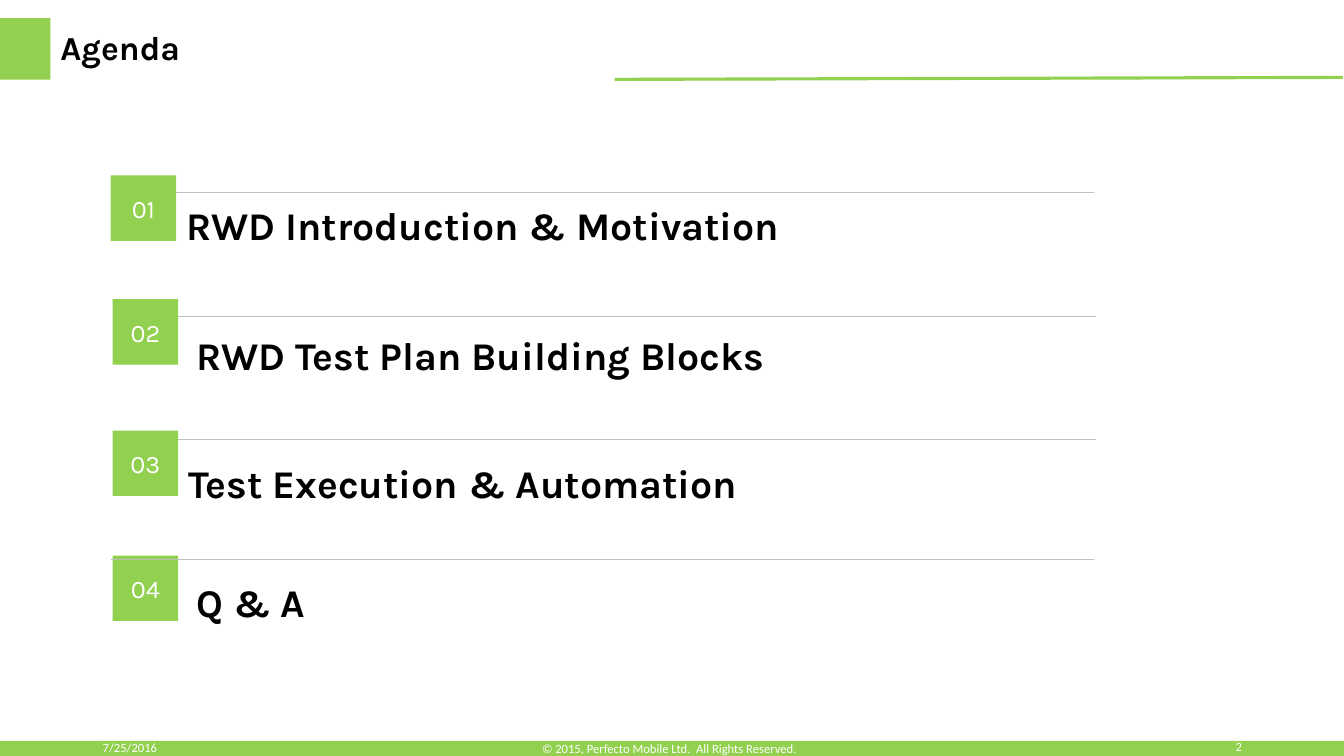
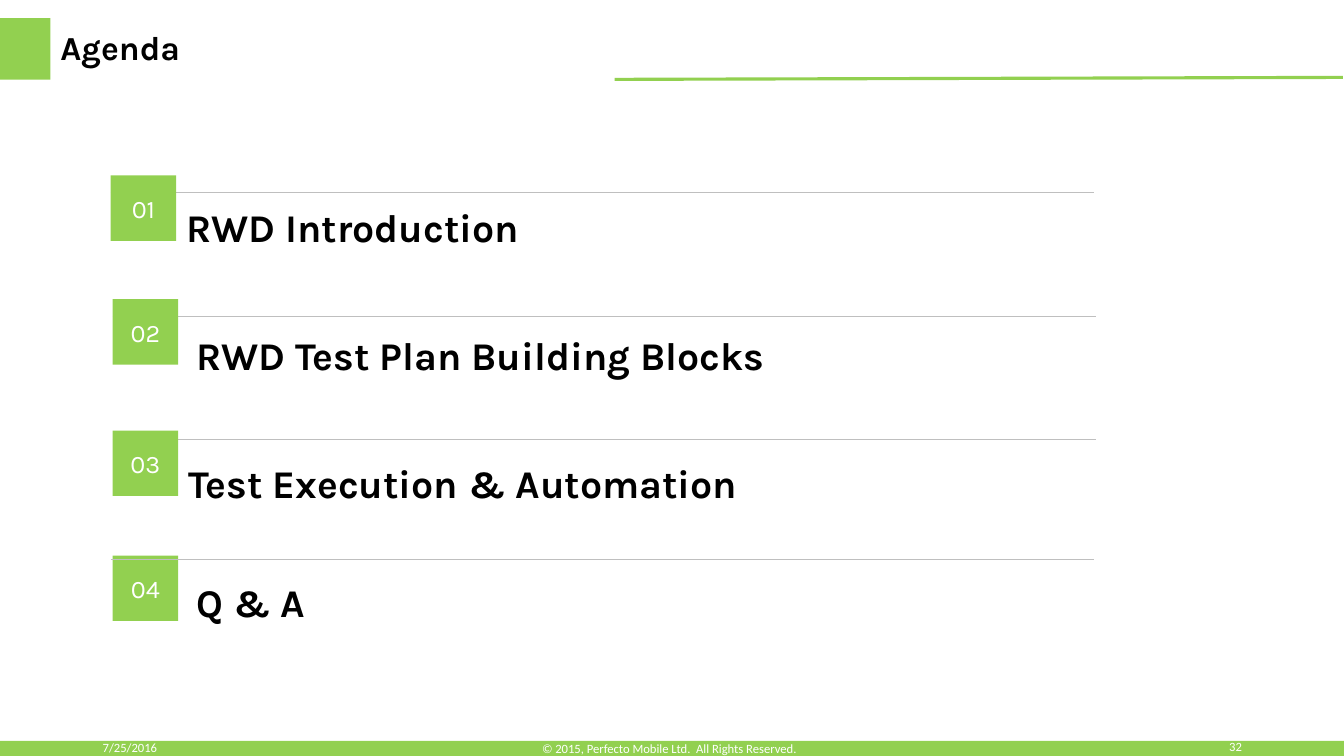
from dataclasses import dataclass

from lxml.etree import SubElement
from pptx import Presentation
from pptx.dml.color import RGBColor
from pptx.enum.shapes import MSO_CONNECTOR as Connector, MSO_SHAPE as Preset
from pptx.enum.text import MSO_ANCHOR as Anchor, PP_ALIGN as Align
from pptx.oxml.ns import qn
from pptx.util import Cm, Pt


@dataclass(frozen=True)
class Theme:
    green: RGBColor = RGBColor(0x92, 0xD0, 0x50)
    gray: RGBColor = RGBColor(0xBF, 0xBF, 0xBF)
    black: RGBColor = RGBColor(0, 0, 0)
    white: RGBColor = RGBColor(255, 255, 255)
    heading_font: str = "Karla"
    footer_font: str = "Calibri"
    title_size: int = 24
    topic_size: int = 28
    number_size: int = 18
    footer_size: int = 9


theme = Theme()


def write(shape, text, size, color, font=theme.heading_font, bold=False,
          align=Align.LEFT, anchor=Anchor.MIDDLE, line_spacing=None):
    frame = shape.text_frame
    frame.word_wrap = True
    frame.vertical_anchor = anchor
    paragraph = frame.paragraphs[0]
    paragraph.text = text
    paragraph.alignment = align
    paragraph.line_spacing = line_spacing
    paragraph.font.name = font
    paragraph.font.size = Pt(size)
    paragraph.font.bold = bold
    paragraph.font.color.rgb = color


def paint(shape, color, line_width=None):
    if line_width:
        shape.line.color.rgb = color
        shape.line.width = Pt(line_width)
    else:
        shape.fill.solid()
        shape.fill.fore_color.rgb = color
        shape.line.fill.background()
    SubElement(shape.element.spPr, qn("a:effectLst"))


presentation = Presentation()
presentation.slide_width = Cm(33.87)
presentation.slide_height = Cm(19.05)

layout = presentation.slide_layouts.get_by_name("Title Only")
for placeholder in list(layout.placeholders):
    if placeholder.placeholder_format.idx:
        placeholder.element.getparent().remove(placeholder.element)
    else:
        placeholder.left, placeholder.top = Cm(1.27), Cm(0.15)
        placeholder.width, placeholder.height = Cm(14.22), Cm(2.21)

slides = [presentation.slides.add_slide(layout) for _ in range(2)]

shapes = slides[0].shapes
title_block = shapes.add_shape(Preset.RECTANGLE, Cm(0), Cm(0.46), Cm(1.27), Cm(1.55))
footer_band = shapes.add_shape(Preset.RECTANGLE, Cm(0), Cm(18.67), Cm(33.87), Cm(0.38))
title_rule = shapes.add_connector(Connector.STRAIGHT, Cm(15.49), Cm(2), Cm(33.84), Cm(1.95))
for shape, line_width in [(title_block, None), (footer_band, None), (title_rule, 2.25)]:
    paint(shape, theme.green, line_width)
    layout.shapes.element.append(shape.element)

SQUARE = 1.65
RULE_LENGTH = 24.79
# square left, square top, rule left, rule top, topic left, rule in front
rows = [
    (2.79, 4.42, 2.79, 4.85, 4.45, False),
    (2.84, 7.54, 2.84, 7.98, 4.7, False),
    (2.84, 10.85, 2.84, 11.07, 4.5, False),
    (2.84, 14, 2.79, 14.1, 4.7, True),
]
later_topics = [
    ("RWD Test Plan Building Blocks", 8.23),
    ("Test Execution & Automation", 11.46),
    ("Q & A", 14.45),
]
agendas = [
    ("2", ("RWD Introduction & Motivation", 4.95)),
    ("32", ("RWD Introduction", 5)),
]

for slide, (page, first_topic) in zip(slides, agendas):
    shapes = slide.shapes
    write(shapes.title, "Agenda", theme.title_size, theme.black, bold=True, line_spacing=0.9)

    footers = [
        ("7/25/2016", 2.34, 18.44, 7.62, 0.79, Align.LEFT),
        (page, 23.93, 18.47, 7.62, 0.69, Align.RIGHT),
        ("© 2015, Perfecto Mobile Ltd.  All Rights Reserved.", 11.15, 18.47, 11.43, 0.79, Align.CENTER),
    ]
    for text, left, top, width, height, align in footers:
        box = shapes.add_textbox(Cm(left), Cm(top), Cm(width), Cm(height))
        write(box, text, theme.footer_size, theme.white, font=theme.footer_font, align=align)

    topics = [first_topic, *later_topics]
    for number, (row, (topic, topic_top)) in enumerate(zip(rows, topics), start=1):
        square_left, square_top, rule_left, rule_top, topic_left, rule_in_front = row
        rule = shapes.add_connector(Connector.STRAIGHT, Cm(rule_left), Cm(rule_top),
                                    Cm(rule_left + RULE_LENGTH), Cm(rule_top))
        paint(rule, theme.gray, 0.5)
        square = shapes.add_shape(Preset.RECTANGLE, Cm(square_left), Cm(square_top),
                                  Cm(SQUARE), Cm(SQUARE))
        paint(square, theme.green)
        write(square, f"{number:02}", theme.number_size, theme.white, align=Align.CENTER)
        if rule_in_front:
            square.element.addnext(rule.element)
        box = shapes.add_textbox(Cm(topic_left), Cm(topic_top), Cm(27.5), Cm(1.45))
        write(box, topic, theme.topic_size, theme.black, bold=True, anchor=Anchor.TOP)

presentation.save("out.pptx")
